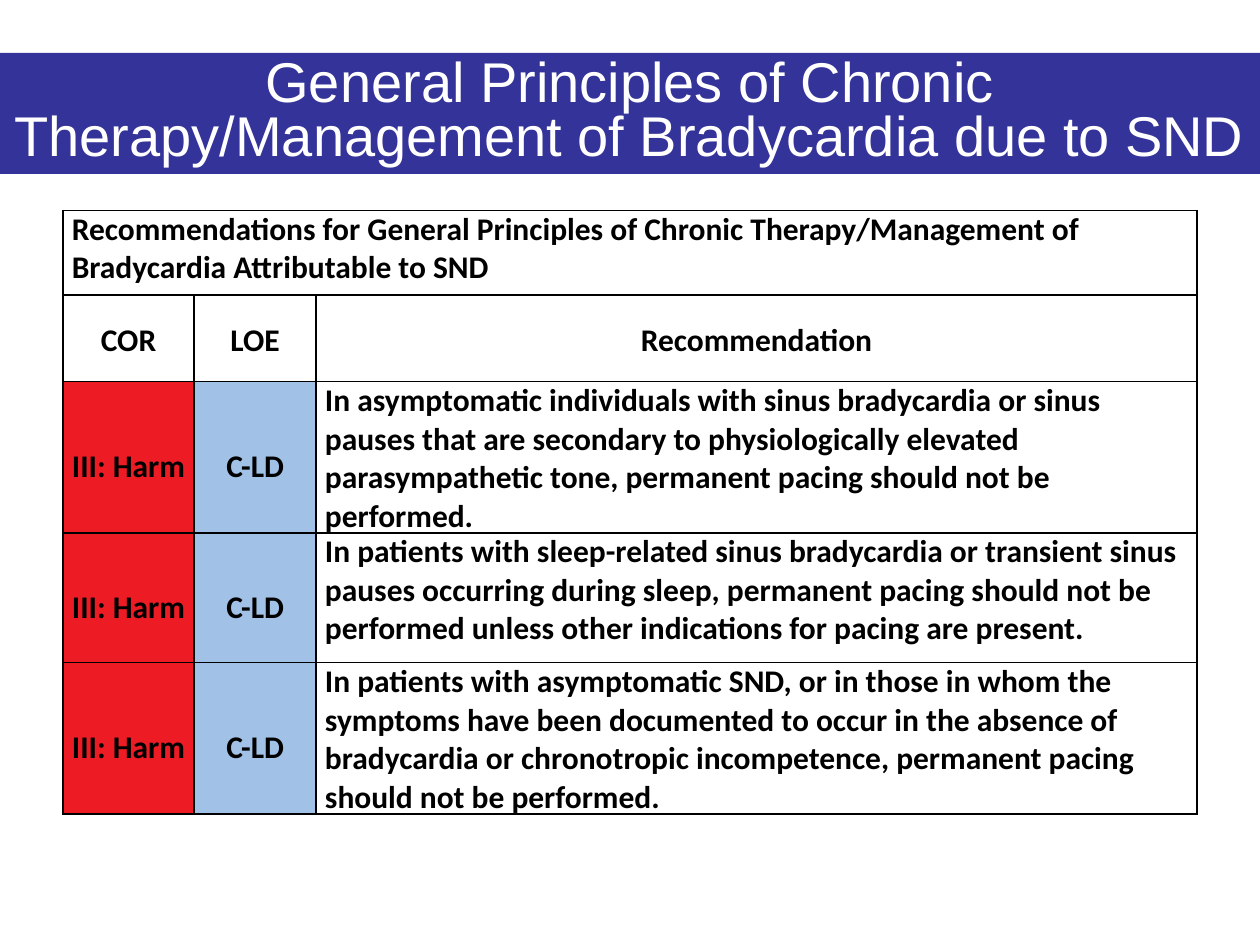
from dataclasses import dataclass
from typing import Optional

from lxml import etree
from pptx import Presentation
from pptx import util as u
from pptx.dml.color import RGBColor
from pptx.enum import text
from pptx.oxml import ns

HUES = {"navy": "333399", "white": "FFFFFF", "black": "000000",
        "red": "ED1C24", "blue": "A1C1E7"}
WIDE, HIGH = u.Inches(10), u.Inches(7.5)
COLS = (1.04, 0.97, 6.99)
ROWS = (0.67, 0.69, 1.2, 1.03, 1.2)
MID, LEFT = text.PP_ALIGN.CENTER, text.PP_ALIGN.LEFT
HEAD = ("Recommendations for General Principles of Chronic "
        "Therapy/Management of Bradycardia Attributable to SND")
ADVICE = (
    "In asymptomatic individuals with sinus bradycardia or sinus pauses that "
    "are secondary to physiologically elevated parasympathetic tone, "
    "permanent pacing should not be performed.",
    "In patients with sleep-related sinus bradycardia or transient sinus "
    "pauses occurring during sleep, permanent pacing should not be performed "
    "unless other indications for pacing are present.",
    "In patients with asymptomatic SND, or in those in whom the symptoms have "
    "been documented to occur in the absence of bradycardia or chronotropic "
    "incompetence, permanent pacing should not be performed.",
)


@dataclass
class Entry:
    words: str
    lead: Optional[float] = None  # line spacing; set for centred entries
    fill: Optional[str] = None


def hue(name: str) -> RGBColor:
    return RGBColor.from_string(HUES[name])


def style(item, **vals) -> None:
    for key, val in vals.items():
        setattr(item, key, val)


def edge(cell) -> None:
    """Rule all four sides of a cell; lines must precede the fill."""
    props = cell._tc.get_or_add_tcPr()
    for spot, side in enumerate(("lnL", "lnR", "lnT", "lnB")):
        line = etree.Element(ns.qn(f"a:{side}"), w=str(u.Pt(1)))
        fill = etree.SubElement(line, ns.qn("a:solidFill"))
        etree.SubElement(fill, ns.qn("a:srgbClr"), val=HUES["black"])
        props.insert(spot, line)


def write(cell, entry: Entry) -> None:
    mid = entry.lead is not None
    anchor = text.MSO_ANCHOR.MIDDLE if mid else text.MSO_ANCHOR.TOP
    style(cell, text=entry.words, vertical_anchor=anchor,
          margin_left=u.Inches(0.07), margin_right=u.Inches(0.07),
          margin_top=0, margin_bottom=0)
    para = cell.text_frame.paragraphs[0]
    style(para, alignment=MID if mid else LEFT, line_spacing=entry.lead)
    font = para.runs[0].font
    style(font, name="Calibri", size=u.Pt(18), bold=True)
    font.color.rgb = hue("black")
    if entry.fill:
        cell.fill.solid()
        cell.fill.fore_color.rgb = hue(entry.fill)
    else:
        cell.fill.background()


def banner(slide, words: str) -> None:
    title = slide.shapes.title
    style(title, left=0, top=int(HIGH * 0.056), width=WIDE,
          height=int(HIGH * 0.128))
    title.fill.solid()
    title.fill.fore_color.rgb = hue("navy")
    frame = title.text_frame
    style(frame, text=words, word_wrap=True,
          auto_size=text.MSO_AUTO_SIZE.SHAPE_TO_FIT_TEXT,
          vertical_anchor=text.MSO_ANCHOR.TOP)
    para = frame.paragraphs[0]
    style(para, alignment=MID, line_spacing=0.8, space_before=u.Pt(0))
    font = para.runs[0].font
    style(font, name="Arial", size=u.Pt(32))
    font.color.rgb = hue("white")


def chart(slide, grid: list[list[Entry]]) -> None:
    frame = slide.shapes.add_table(
        len(ROWS), len(COLS), int(WIDE * 0.05), u.Inches(1.67),
        u.Inches(sum(COLS)), u.Inches(sum(ROWS)))
    table = frame.table
    style(table, first_row=False, horz_banding=False)
    for col, size in zip(table.columns, COLS):
        col.width = u.Inches(size)
    for row, size in zip(table.rows, ROWS):
        row.height = u.Inches(size)
    table.cell(0, 0).merge(table.cell(0, len(COLS) - 1))
    for r, line in enumerate(grid):
        for c, entry in enumerate(line):
            write(table.cell(r, c), entry)
    for cell in table.iter_cells():
        edge(cell)


def main() -> None:
    deck = Presentation()
    style(deck, slide_width=WIDE, slide_height=HIGH)
    slide = deck.slides.add_slide(deck.slide_layouts[5])

    # Title band
    banner(slide, "General Principles of Chronic "
                  "Therapy/Management of Bradycardia due to SND")

    # Recommendations: heading, column names, one row per advice
    names = [Entry(n, 1.15) for n in ("COR", "LOE", "Recommendation")]
    body = [[Entry("III: Harm", 1.5, "red"), Entry("C-LD", 1.5, "blue"),
             Entry(words)] for words in ADVICE]
    chart(slide, [[Entry(HEAD)], names, *body])

    deck.save("out.pptx")


if __name__ == "__main__":
    main()
